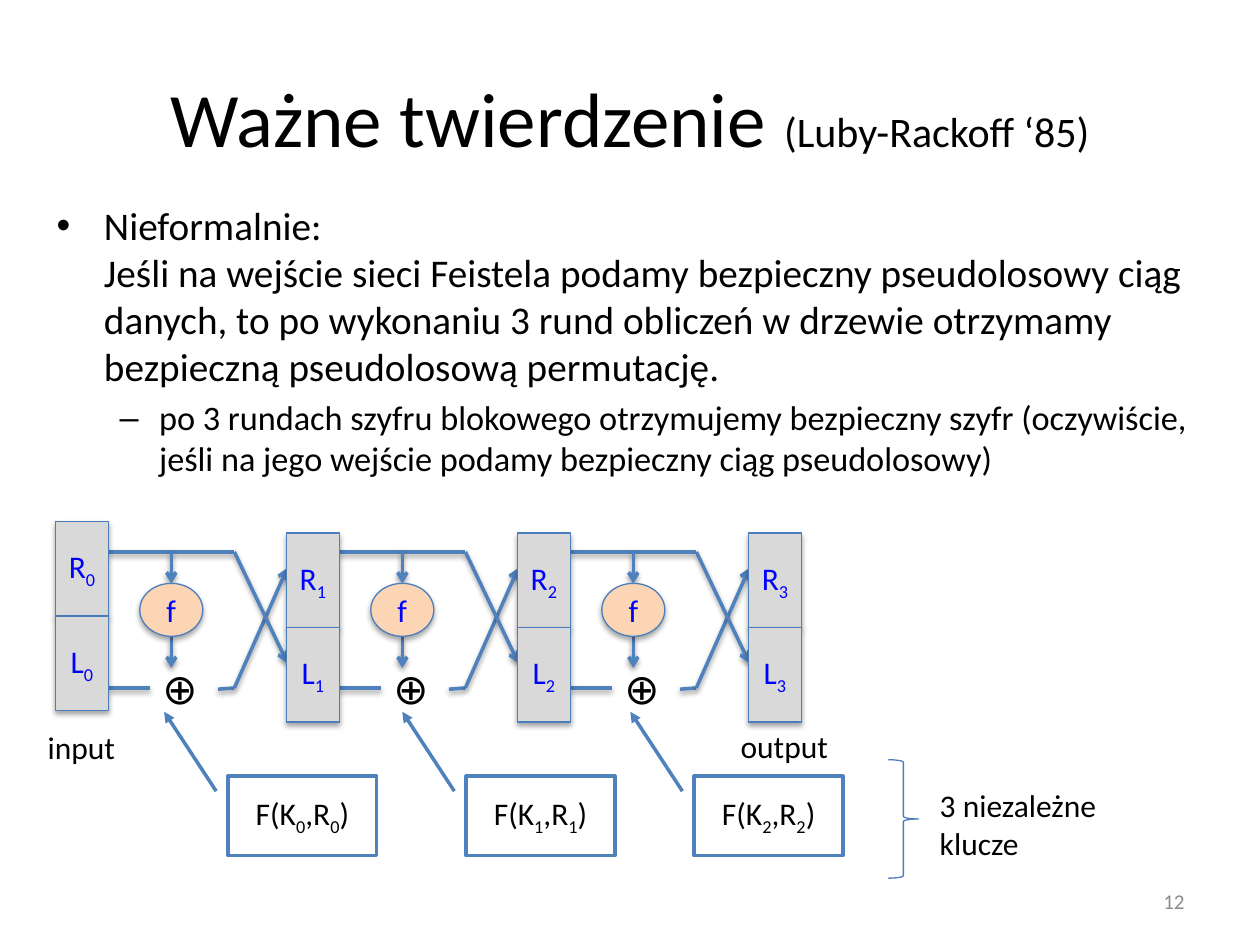
from lxml import etree
from pptx import Presentation
from pptx.dml.color import RGBColor
from pptx.enum.shapes import MSO_CONNECTOR, MSO_SHAPE
from pptx.enum.text import MSO_ANCHOR as ANCHOR, MSO_AUTO_SIZE as AUTO_SIZE, PP_ALIGN as ALIGN
from pptx.oxml import parse_xml
from pptx.oxml.ns import nsdecls, qn
from pptx.util import Inches, Pt

COLORS = {
    "text": "000000", "number": "8C8C8C", "symbol": "0000FF", "block": "D9D9D9",
    "function": "FCD5B5", "outline": "4B7EBC", "wire": "4F81BD", "box": "FFFFFF",
}
PLAIN = {"word_wrap": False, "auto_size": AUTO_SIZE.SHAPE_TO_FIT_TEXT}
WRAPPED = {"word_wrap": True, "auto_size": AUTO_SIZE.NONE}
CENTERED = {"word_wrap": True, "vertical_anchor": ANCHOR.MIDDLE}
NARROW = {**CENTERED, "margin_left": 0, "margin_right": 0}


def write(shape, text, size=18, color="text", align=ALIGN.LEFT, frame_format=PLAIN):
    for name, value in frame_format.items():
        setattr(shape.text_frame, name, value)
    paragraph = shape.text_frame.paragraphs[0]
    paragraph.alignment = align
    for line_number, line in enumerate(text.split("\n")):
        if line_number:
            paragraph.add_line_break()
        for part_number, part in enumerate(line.split("|")):
            if not part:
                continue
            run = paragraph.add_run()
            run.text = part
            run.font.name = "Calibri"
            run.font.size = Pt(size)
            run.font.color.rgb = RGBColor.from_string(COLORS[color])
            if part_number % 2:
                run.font._element.set("baseline", "-25000")


def outline(shape, color, width, arrow=None, shadow_opacity=0):
    shape.line.color.rgb = RGBColor.from_string(COLORS[color])
    shape.line.width = Pt(width)
    properties = shape._element.spPr
    if arrow:
        etree.SubElement(properties.find(qn("a:ln")), qn("a:tailEnd"), type=arrow)
    shadow = (
        f'<a:outerShdw blurRad="39370" dist="22860" dir="5400000" rotWithShape="0">'
        f'<a:srgbClr val="000000"><a:alpha val="{shadow_opacity * 1000}"/></a:srgbClr>'
        f'</a:outerShdw>' if shadow_opacity else ""
    )
    properties.append(parse_xml(f'<a:effectLst {nsdecls("a")}>{shadow}</a:effectLst>'))


presentation = Presentation()
presentation.slide_width, presentation.slide_height = Inches(10), Inches(7.5)
slide = presentation.slides.add_slide(presentation.slide_layouts[1])
shapes = slide.shapes

title, body = slide.placeholders
for placeholder, bounds in ((title, (0.5, 0.3, 9, 1.25)), (body, (0.35, 1.55, 9.29, 2.2))):
    placeholder.left, placeholder.top, placeholder.width, placeholder.height = map(Inches, bounds)

write(title, "Ważne twierdzenie ", 44, align=ALIGN.CENTER,
      frame_format={**WRAPPED, "vertical_anchor": ANCHOR.MIDDLE})
write(title, "(Luby-Rackoff ‘85)", 24, align=ALIGN.CENTER, frame_format={})
write(body, "Nieformalnie:\nJeśli na wejście sieci Feistela podamy bezpieczny pseudolosowy ciąg "
      "danych, to po wykonaniu 3 rund obliczeń w drzewie otrzymamy bezpieczną "
      "pseudolosową permutację.", 22.4, frame_format=WRAPPED)
paragraph = body.text_frame.add_paragraph()
paragraph.level = 1
paragraph.text = ("po 3 rundach szyfru blokowego otrzymujemy bezpieczny szyfr (oczywiście, "
                  "jeśli na jego wejście podamy bezpieczny ciąg pseudolosowy)")
for name, value in {"name": "Calibri", "size": Pt(19.6)}.items():
    setattr(paragraph.runs[0].font, name, value)
paragraph.runs[0].font.color.rgb = RGBColor.from_string(COLORS["text"])

ROUNDS = 3
ROUND_STEP = 5.5 / ROUNDS
BLOCK_WIDTH, BLOCK_HEIGHT = 0.42, 0.75
WIRES = [
    (0.42, 4.38, 1.42, 4.38, None),
    (0.42, 5.46, 0.75, 5.46, None),
    (1.29, 5.47, 1.42, 5.46, None),
    (1.42, 5.46, 1.84, 4.51, "arrow"),
    (1.42, 4.38, 1.84, 5.26, "arrow"),
    (0.92, 4.38, 0.92, 4.63, "arrow"),
    (0.92, 5.05, 0.92, 5.3, "arrow"),
]

for index in range(ROUNDS + 1):
    left = 0.44 + index * ROUND_STEP
    top = 4.23 if index else 4.14
    nodes = [
        (MSO_SHAPE.RECTANGLE, left, top + row * BLOCK_HEIGHT, BLOCK_WIDTH, BLOCK_HEIGHT,
         "block", f"{half}|{index}")
        for row, half in enumerate("RL")
    ]
    if index < ROUNDS:
        nodes.append((MSO_SHAPE.OVAL, left + 0.67, 4.63, 0.5, 0.42, "function", "f"))
        for x1, y1, x2, y2, arrow in WIRES:
            wire = shapes.add_connector(MSO_CONNECTOR.STRAIGHT, Inches(left + x1), Inches(y1),
                                        Inches(left + x2), Inches(y2))
            outline(wire, "wire", 2, arrow, 38)
        xor = shapes.add_textbox(Inches(left + 0.75), Inches(5.21), Inches(0.54), Inches(0.5))
        write(xor, "⊕", 24)
    for kind, x, y, width, height, fill, text in nodes:
        node = shapes.add_shape(kind, Inches(x), Inches(y), Inches(width), Inches(height))
        node.fill.solid()
        node.fill.fore_color.rgb = RGBColor.from_string(COLORS[fill])
        outline(node, "outline", 0.75, shadow_opacity=35)
        write(node, text, 18, "symbol", ALIGN.CENTER, NARROW)

for key, left in enumerate((1.81, 3.7, 5.51)):
    callout = shapes.add_shape(MSO_SHAPE.LINE_CALLOUT_1, Inches(left), Inches(6.16),
                               Inches(1.18), Inches(0.63))
    for position, value in enumerate((0.19, -0.08, -0.81, -0.43)):
        callout.adjustments[position] = value
    callout.fill.solid()
    callout.fill.fore_color.rgb = RGBColor.from_string(COLORS["box"])
    outline(callout, "wire", 2, "triangle")
    write(callout, f"F(K|{key}|,R|{key}|)", align=ALIGN.CENTER, frame_format=CENTERED)

brace = shapes.add_shape(MSO_SHAPE.RIGHT_BRACE, Inches(7.05), Inches(6.03),
                         Inches(0.24), Inches(0.94))
brace.fill.background()
outline(brace, "outline", 0.75)

LABELS = [
    ((0.28, 5.73, 0.75, 0.4), "input", {}),
    ((5.78, 5.72, 0.9, 0.4), "output", {}),
    ((7.36, 6.19, 1.65, 0.71), "3 niezależne \nklucze", {"frame_format": WRAPPED}),
    ((7.17, 6.95, 2.33, 0.4), "12",
     {"size": 12, "color": "number", "align": ALIGN.RIGHT, "frame_format": CENTERED}),
]
for bounds, text, text_format in LABELS:
    write(shapes.add_textbox(*map(Inches, bounds)), text, **text_format)

presentation.save("out.pptx")
